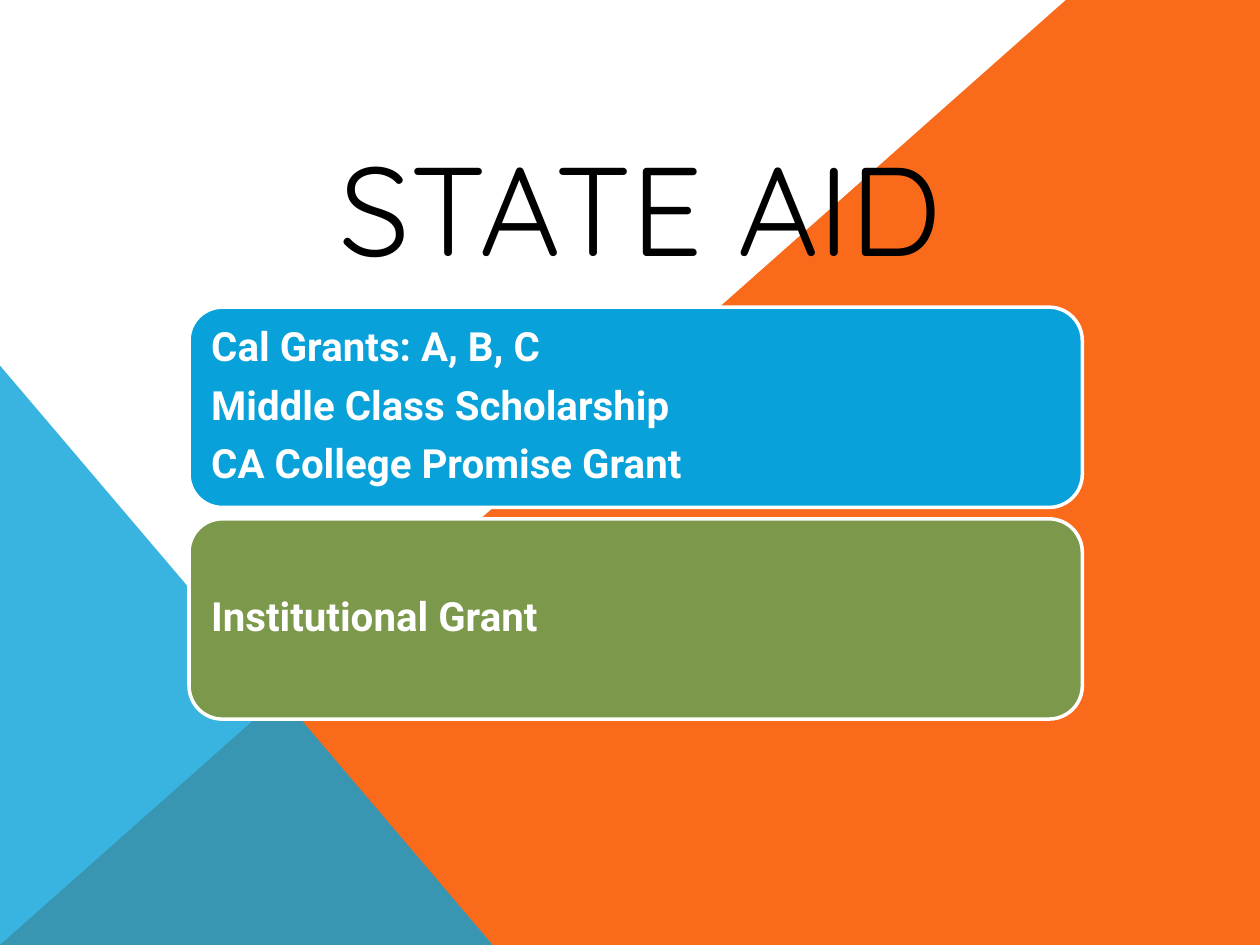
from dataclasses import dataclass
from lxml.etree import SubElement
from pptx import Presentation
from pptx.dml.color import RGBColor
from pptx.enum.shapes import MSO_SHAPE
from pptx.enum.text import MSO_ANCHOR, PP_ALIGN
from pptx.oxml.ns import qn
from pptx.util import Inches, Pt

WIDE, HIGH = 10, 7.5


@dataclass(frozen=True)
class Theme:
    white: str = "FFFFFF"
    black: str = "000000"
    orange: str = "F96A1B"
    blue: str = "08A1D9"
    green: str = "7C984A"
    head: str = "Quicksand"
    body: str = "Roboto"
    title: float = 72
    text: float = 23
    gap: float = 8.5
    edge: float = 2


THEME = Theme()


def box(x, y, w, h):
    return [Inches(n) for n in (x * WIDE, y * HIGH, w * WIDE, h * HIGH)]


def paint(shape, color, alpha=None):
    shape.shadow.inherit = False
    shape.fill.solid()
    shape.fill.fore_color.rgb = RGBColor.from_string(color)
    shape.line.fill.background()
    if alpha:
        tint = shape.fill._xPr.find(qn("a:solidFill"))[0]
        SubElement(tint, qn("a:alpha"), val=str(alpha * 1000))


def style(font, name, size, color, bold=False):
    font.name = name
    font.size = Pt(size)
    font.bold = bold
    font.color.rgb = RGBColor.from_string(color)


def inset(frame, side, top, base):
    frame.word_wrap = True
    frame.margin_left = frame.margin_right = Inches(side)
    frame.margin_top, frame.margin_bottom = Inches(top), Inches(base)


def slope(slide):
    pen = slide.shapes.build_freeform(0, Inches(HIGH))
    points = [(0.846, 0), (1, 0), (1, 1)]
    pen.add_line_segments(
        [(Inches(x * WIDE), Inches(y * HIGH)) for x, y in points], close=True)
    paint(pen.convert_to_shape(), THEME.orange)


def wedge(slide):
    shape = slide.shapes.add_shape(
        MSO_SHAPE.RIGHT_TRIANGLE, *box(0, 0.387, 0.391, 0.613))
    paint(shape, THEME.blue, 80)


def title(slide, words):
    frame = slide.shapes.add_textbox(*box(0.083, 0.1, 0.85, 0.199)).text_frame
    inset(frame, 0.1, 0.05, 0.01)
    frame.vertical_anchor = MSO_ANCHOR.BOTTOM
    line = frame.paragraphs[0]
    line.text = words
    line.alignment = PP_ALIGN.CENTER
    style(line.font, THEME.head, THEME.title, THEME.black)


def card(slide, row, color, lines):
    shape = slide.shapes.add_shape(
        MSO_SHAPE.ROUNDED_RECTANGLE,
        *box(0.15, 0.325 + row * 0.224, 0.709, 0.212))
    paint(shape, color)
    shape.line.color.rgb = RGBColor.from_string(THEME.white)
    shape.line.width = Pt(THEME.edge)
    frame = shape.text_frame
    inset(frame, 0.1, 0.1, 0.1)
    frame.vertical_anchor = MSO_ANCHOR.MIDDLE
    frame.text = "\n".join(lines)
    for line in frame.paragraphs:
        line.alignment = PP_ALIGN.LEFT
        line.line_spacing = 0.9
        line.space_after = Pt(THEME.gap)
        style(line.font, THEME.body, THEME.text, THEME.white, True)


def main():
    deck = Presentation()
    deck.slide_width, deck.slide_height = Inches(WIDE), Inches(HIGH)
    slide = deck.slides.add_slide(deck.slide_layouts[6])
    slope(slide)
    wedge(slide)
    cards = [
        (THEME.blue, ["Cal Grants: A, B, C", "Middle Class Scholarship",
                      "CA College Promise Grant"]),
        (THEME.green, ["Institutional Grant"]),
    ]
    for row, (color, lines) in enumerate(cards):
        card(slide, row, color, lines)
    title(slide, "STATE AID")
    deck.save("out.pptx")


if __name__ == "__main__":
    main()
